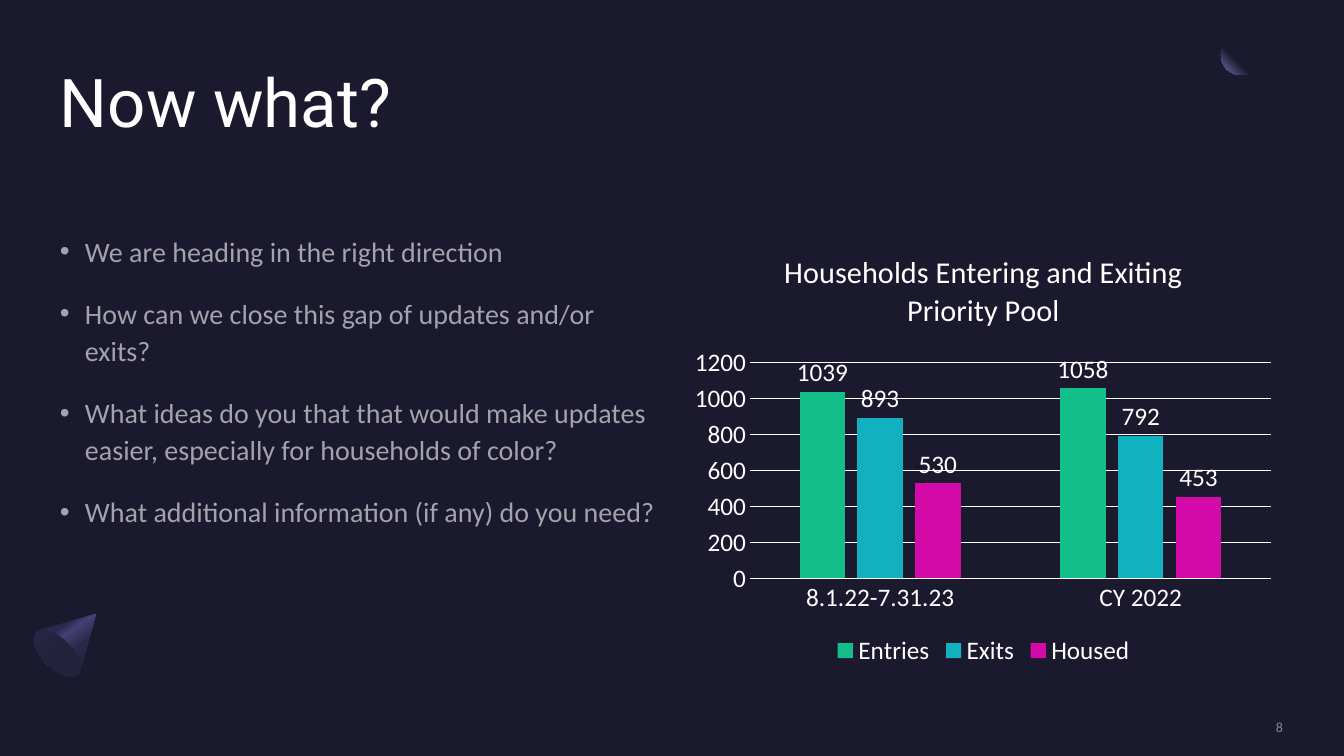
from lxml import etree
from pptx import Presentation
from pptx.chart.data import CategoryChartData
from pptx.dml.color import RGBColor
from pptx.enum.chart import XL_CHART_TYPE, XL_LABEL_POSITION, XL_LEGEND_POSITION, XL_TICK_MARK
from pptx.enum.shapes import MSO_SHAPE
from pptx.enum.text import MSO_ANCHOR, PP_ALIGN
from pptx.oxml import parse_xml
from pptx.oxml.ns import nsdecls, qn
from pptx.util import Pt

COLUMNS = XL_CHART_TYPE.COLUMN_CLUSTERED
OUTSIDE_END = XL_LABEL_POSITION.OUTSIDE_END
LEGEND_BOTTOM = XL_LEGEND_POSITION.BOTTOM
NO_TICK = XL_TICK_MARK.NONE
OVAL = MSO_SHAPE.OVAL
TOP, MIDDLE = MSO_ANCHOR.TOP, MSO_ANCHOR.MIDDLE
LEFT, RIGHT = PP_ALIGN.LEFT, PP_ALIGN.RIGHT

WIDTH, HEIGHT = 1344, 756
SCALE = 12192000 / WIDTH
COLORS = {
    "night": "1B192E", "white": "FFFFFF", "grey": "A6A6A6",
    "lilac": "7771B2", "violet": "454075", "plum": "2C284A", "shade": "23213C",
    "Entries": "13BE89", "Exits": "12B1BF", "Housed": "D40AA8",
}


def px(length):
    return round(length * SCALE)


def apply(target, values):
    for name, value in values.items():
        setattr(target, name, value)


class Deck:
    heading, body = "Roboto", "Calibri"

    def __init__(self):
        self.prs = Presentation()
        apply(self.prs, {"slide_width": px(WIDTH), "slide_height": px(HEIGHT)})
        self.slide = self.prs.slides.add_slide(self.prs.slide_layouts[6])
        self.paint(self.slide.background.fill, "night")

    def paint(self, fill, color):
        fill.solid()
        fill.fore_color.rgb = RGBColor.from_string(COLORS[color])

    def style(self, font, size, color="white", face=None):
        apply(font, {"size": Pt(size), "name": face or self.body, "bold": False})
        font.color.rgb = RGBColor.from_string(COLORS[color])

    def gradient(self, shape, stops, direction):
        """Fill a borderless shape with (position %, colour) stops."""
        shape.shadow.inherit = False
        shape.line.fill.background()
        marks = "".join(f'<a:gs pos="{at * 1000}"><a:srgbClr val="{COLORS[color]}"/></a:gs>'
                        for at, color in stops)
        shape.fill.background()
        no_fill = shape._element.spPr.find(qn("a:noFill"))
        no_fill.getparent().replace(no_fill, parse_xml(
            f'<a:gradFill {nsdecls("a")} rotWithShape="1">'
            f'<a:gsLst>{marks}</a:gsLst>{direction}</a:gradFill>'))

    def ellipse(self, box, stops, direction, rotation=0):
        shape = self.slide.shapes.add_shape(OVAL, *map(px, box))
        shape.rotation = rotation
        self.gradient(shape, stops, direction)

    def outline(self, points, stops, direction):
        builder = self.slide.shapes.build_freeform(*points[0], scale=SCALE)
        builder.add_line_segments(points[1:], close=True)
        self.gradient(builder.convert_to_shape(), stops, direction)

    def text(self, box, lines, size, color="white", face=None, alpha=None,
             align=LEFT, anchor=TOP, bullets=False):
        frame = self.slide.shapes.add_textbox(*map(px, box)).text_frame
        apply(frame, {"word_wrap": True, "vertical_anchor": anchor, "margin_left": 0,
                      "margin_top": 0, "margin_right": 0, "margin_bottom": 0})
        for index, line in enumerate(lines):
            paragraph = frame.add_paragraph() if index else frame.paragraphs[0]
            paragraph.alignment = align
            run = paragraph.add_run()
            run.text = line
            self.style(run.font, size, color, face)
            if alpha:
                tint = run._r.rPr.find(".//" + qn("a:srgbClr"))
                etree.SubElement(tint, qn("a:alpha"), val=str(alpha * 1000))
            if bullets:
                self.bullet(paragraph)

    def bullet(self, paragraph):
        apply(paragraph, {"line_spacing": 1.1, "space_before": Pt(10), "space_after": Pt(8)})
        props = paragraph._p.get_or_add_pPr()
        props.set("marL", str(px(25)))
        props.set("indent", str(px(-25)))
        etree.SubElement(props, qn("a:buFont"), typeface="Arial")
        etree.SubElement(props, qn("a:buChar"), char="•")

    def place_plot(self, chart, **fractions):
        """Fix the inner plot area, in fractions of the chart."""
        area = chart._chartSpace.find(".//" + qn("c:plotArea"))
        for automatic in area.findall(qn("c:layout")):
            area.remove(automatic)
        layout = etree.Element(qn("c:layout"))
        area.insert(0, layout)
        manual = etree.SubElement(layout, qn("c:manualLayout"))
        values = {"layoutTarget": "inner", "xMode": "edge", "yMode": "edge", **fractions}
        for name, value in values.items():
            etree.SubElement(manual, qn("c:" + name), val=str(value))

    def columns(self, box, title, categories, series):
        data = CategoryChartData()
        data.categories = categories
        for name, values in series.items():
            data.add_series(name, values)
        chart = self.slide.shapes.add_chart(COLUMNS, *map(px, box), data).chart
        self.style(chart.font, 18)

        # Title and legend
        heading = chart.chart_title.text_frame.paragraphs[0].add_run()
        heading.text = title
        self.style(heading.font, 21.6)
        chart.has_legend = True
        apply(chart.legend, {"position": LEGEND_BOTTOM, "include_in_layout": False})
        self.style(chart.legend.font, 18)

        # Axes
        for axis in (chart.category_axis, chart.value_axis):
            apply(axis, {"major_tick_mark": NO_TICK, "minor_tick_mark": NO_TICK})
            self.style(axis.tick_labels.font, 18)
        apply(chart.value_axis, {"minimum_scale": 0, "maximum_scale": 1200, "major_unit": 200})
        chart.value_axis.format.line.fill.background()
        for part in (chart.category_axis, chart.value_axis.major_gridlines):
            self.paint(part.format.line.fill, "white")
            part.format.line.width = Pt(0.75)

        # Columns
        plot = chart.plots[0]
        apply(plot, {"gap_width": 219, "overlap": -27, "vary_by_categories": False})
        for column in plot.series:
            self.paint(column.format.fill, column.name)
            labels = column.data_labels
            apply(labels, {"show_value": True, "position": OUTSIDE_END})
            self.style(labels.font, 18)
        self.place_plot(chart, x=0.11, y=0.3, w=0.87, h=0.49)


def main():
    deck = Deck()

    # Decorations: moon and cone
    deck.ellipse((1221, 36, 39, 39), [(0, "night"), (60, "night"), (100, "lilac")],
                 '<a:path path="circle"><a:fillToRect l="100000" b="100000"/></a:path>')
    cone = [(96, 614), (80, 671), (78, 675), (72, 677), (60, 673),
            (46, 664), (38, 652), (34, 640), (36, 632), (39, 630)]
    deck.outline(cone, [(30, "plum"), (40, "violet"), (60, "plum"), (100, "night")],
                 '<a:lin ang="3300000" scaled="0"/>')
    deck.ellipse((42, 624, 30, 59), [(50, "shade"), (100, "plum")],
                 '<a:lin ang="5400000" scaled="0"/>', rotation=135)

    # Title, discussion points and page number
    deck.text((60, 60, 1223, 147), ["Now what?"], 48, face=deck.heading)
    deck.text((60, 231, 599, 440), [
        "We are heading in the right direction",
        "How can we close this gap of updates and/or exits?",
        "What ideas do you that that would make updates easier, especially for households of color?",
        "What additional information (if any) do you need?",
    ], 20, alpha=60, bullets=True)
    deck.text((1097, 718, 186, 17), ["8"], 10, "grey", alpha=80, align=RIGHT, anchor=MIDDLE)

    # Priority pool chart
    deck.columns((684, 231, 599, 440), "Households Entering and Exiting Priority Pool",
                 ["8.1.22-7.31.23", "CY 2022"],
                 {"Entries": (1039, 1058), "Exits": (893, 792), "Housed": (530, 453)})

    deck.prs.save("out.pptx")


if __name__ == "__main__":
    main()
